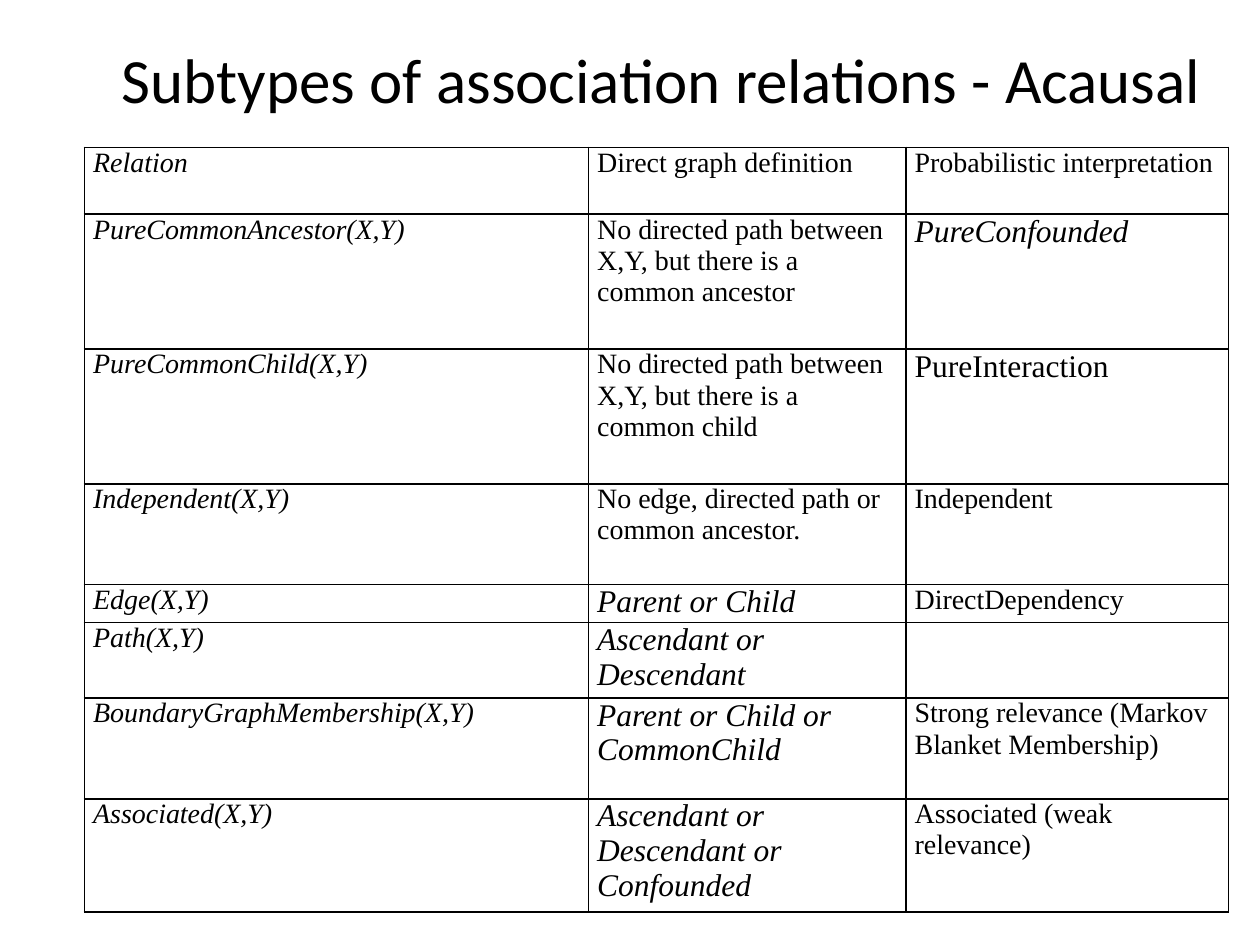
from dataclasses import dataclass

from lxml import etree
from pptx import Presentation
from pptx.dml.color import RGBColor
from pptx.enum.text import MSO_ANCHOR, PP_ALIGN
from pptx.oxml.ns import qn
from pptx.util import Inches, Pt

MIDDLE, TOP = MSO_ANCHOR.MIDDLE, MSO_ANCHOR.TOP
CENTER = PP_ALIGN.CENTER


@dataclass(frozen=True)
class Theme:
    """Colours, fonts and sizes of the slide."""
    ink: str = "000000"
    paper: str = "FFFFFF"
    title_font: str = "Calibri"
    body_font: str = "Times New Roman"
    title: int = 36
    body: int = 16
    large: int = 18
    border: int = 1


THEME = Theme()
PLAIN = {"size": Pt(THEME.body), "italic": False}
ITALIC = {"size": Pt(THEME.body), "italic": True}
LARGE = {"size": Pt(THEME.large), "italic": False}
LARGE_ITALIC = {"size": Pt(THEME.large), "italic": True}

COLUMN_WIDTHS = [4, 2.52, 2.56]
RELATION_ROWS = [
    (0.53, ("Relation", ITALIC), ("Direct graph definition", PLAIN),
     ("Probabilistic interpretation", PLAIN)),
    (1.07, ("PureCommonAncestor(X,Y)", ITALIC),
     ("No directed path between X,Y, but there is a common ancestor", PLAIN),
     ("PureConfounded", LARGE_ITALIC)),
    (1.07, ("PureCommonChild(X,Y)", ITALIC),
     ("No directed path between X,Y, but there is a common child", PLAIN),
     ("PureInteraction", LARGE)),
    (0.8, ("Independent(X,Y)", ITALIC),
     ("No edge, directed path or common ancestor.", PLAIN),
     ("Independent", PLAIN)),
    (0.3, ("Edge(X,Y)", ITALIC), ("Parent or Child", LARGE_ITALIC),
     ("DirectDependency", PLAIN)),
    (0.6, ("Path(X,Y)", ITALIC), ("Ascendant or Descendant", LARGE_ITALIC),
     ("", PLAIN)),
    (0.8, ("BoundaryGraphMembership(X,Y)", ITALIC),
     ("Parent or Child or CommonChild", LARGE_ITALIC),
     ("Strong relevance (Markov Blanket Membership)", PLAIN)),
    (0.9, ("Associated(X,Y)", ITALIC),
     ("Ascendant or Descendant or Confounded", LARGE_ITALIC),
     ("Associated (weak relevance)", PLAIN)),
]


def set_attrs(obj, values):
    """Set every attribute named in a dict."""
    for name, value in values.items():
        setattr(obj, name, value)


def add_text(p, text, font, fmt):
    """Add one formatted run to a paragraph."""
    r = p.add_run()
    r.text = text
    set_attrs(r.font, {"name": font, **fmt})
    r.font.color.rgb = RGBColor.from_string(THEME.ink)


def add_title(s, text):
    """Place and format the title placeholder."""
    sp = s.shapes.title
    set_attrs(sp, {"left": Inches(0.5), "top": Inches(0),
                   "width": Inches(9.5), "height": Inches(1.25)})
    tf = sp.text_frame
    set_attrs(tf, {"word_wrap": True, "vertical_anchor": MIDDLE})
    p = tf.paragraphs[0]
    p.alignment = CENTER
    add_text(p, text, THEME.title_font, {"size": Pt(THEME.title)})


def add_borders(cell):
    """Draw a solid line on all four sides of a cell."""
    tc_pr = cell._tc.get_or_add_tcPr()
    for i, side in enumerate(("a:lnL", "a:lnR", "a:lnT", "a:lnB")):
        ln = etree.Element(qn(side), w=str(Pt(THEME.border)))
        fill = etree.SubElement(ln, qn("a:solidFill"))
        etree.SubElement(fill, qn("a:srgbClr"), val=THEME.ink)
        tc_pr.insert(i, ln)


def fill_cell(cell, text, fmt):
    """Write and format one table cell."""
    set_attrs(cell, {"margin_left": Inches(0.07), "margin_right": Inches(0.07),
                     "margin_top": 0, "margin_bottom": 0,
                     "vertical_anchor": TOP})
    cell.fill.background()
    add_borders(cell)
    if text:
        add_text(cell.text_frame.paragraphs[0], text, THEME.body_font, fmt)


def add_relation_table(s, left, top):
    """Add the table of relations."""
    width = sum(COLUMN_WIDTHS)
    height = sum(row[0] for row in RELATION_ROWS)
    table = s.shapes.add_table(len(RELATION_ROWS), len(COLUMN_WIDTHS),
                               Inches(left), Inches(top),
                               Inches(width), Inches(height)).table
    set_attrs(table, {"first_row": False, "horz_banding": False})
    for column, column_width in zip(table.columns, COLUMN_WIDTHS):
        column.width = Inches(column_width)
    for row, (row_height, *entries) in zip(table.rows, RELATION_ROWS):
        row.height = Inches(row_height)
        for cell, (text, fmt) in zip(row.cells, entries):
            fill_cell(cell, text, fmt)


def main():
    """Build and save the slide."""
    prs = Presentation()
    set_attrs(prs, {"slide_width": Inches(10), "slide_height": Inches(7.5)})
    s = prs.slides.add_slide(prs.slide_layouts[5])
    s.background.fill.solid()
    s.background.fill.fore_color.rgb = RGBColor.from_string(THEME.paper)
    add_title(s, "Subtypes of association relations - Acausal")
    add_relation_table(s, 0.67, 1.17)
    prs.save("out.pptx")


if __name__ == "__main__":
    main()
